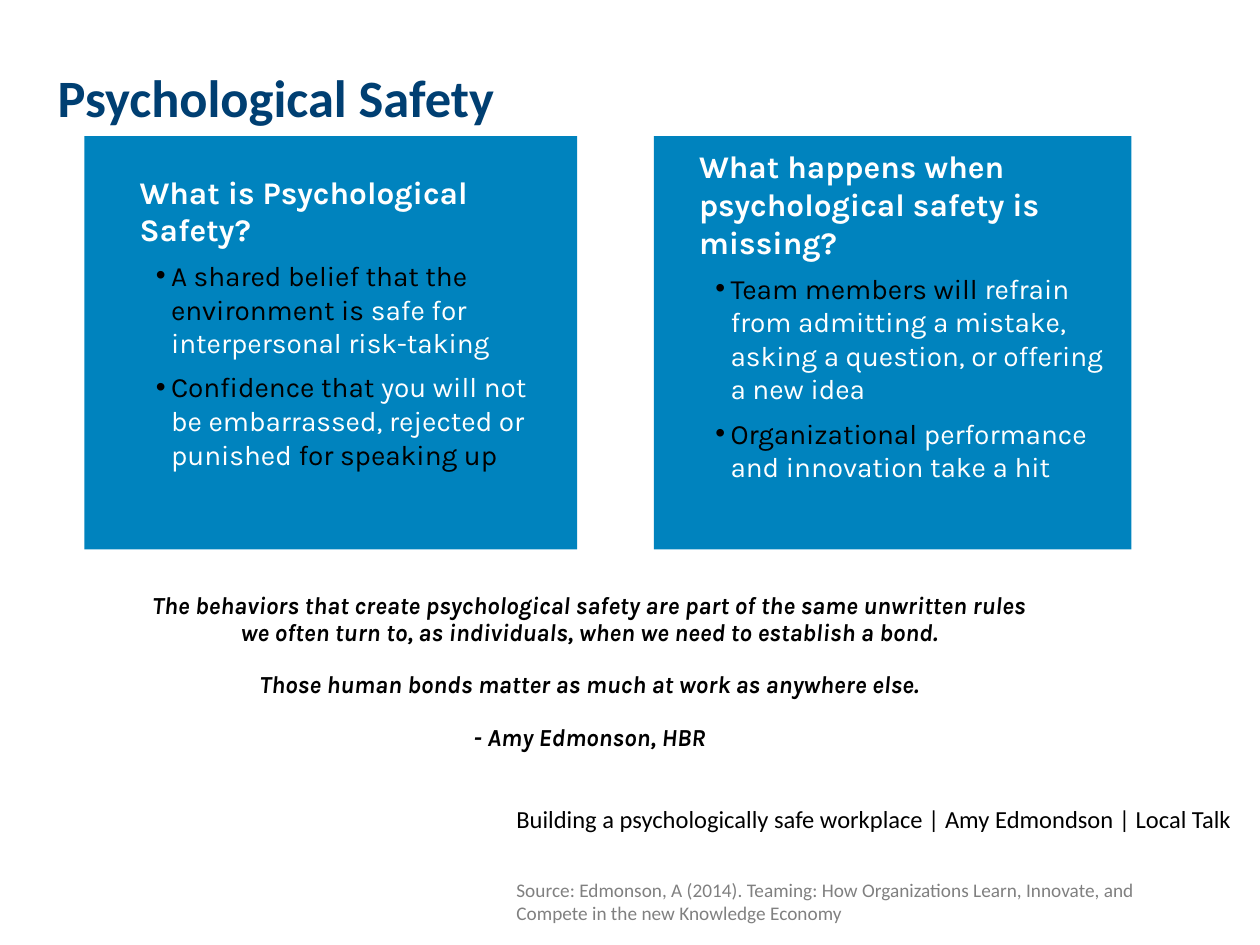
"""Build the Psychological Safety slide with two panels, a quote and its sources."""
from lxml import etree
from pptx import Presentation
from pptx.dml.color import RGBColor
from pptx.enum.shapes import MSO_SHAPE
from pptx.enum.text import MSO_ANCHOR, PP_ALIGN
from pptx.oxml.ns import qn
from pptx.util import Inches, Pt

COLORS = {"navy": "003F72", "blue": "0083BE", "white": "FFFFFF", "black": "000000", "gray": "808080"}

FORMATS = {
    "title": {"size": Pt(30), "name": "Calibri", "bold": True},
    "heading": {"size": Pt(18), "name": "Karla", "bold": True},
    "bullet": {"size": Pt(16), "name": "Karla", "bold": False},
    "quote": {"size": Pt(14), "name": "Karla", "bold": True, "italic": True},
    "talk": {"size": Pt(14), "name": "Calibri"},
    "source": {"size": Pt(11), "name": "Calibri"},
}

TITLE = "Psychological Safety"
QUOTE = [
    "The behaviors that create psychological safety are part of the same unwritten rules "
    "we often turn to, as individuals, when we need to establish a bond.",
    "Those human bonds matter as much at work as anywhere else.",
    "- Amy Edmonson, HBR",
]
TALK = "Building a psychologically safe workplace | Amy Edmondson | Local Talk"
SOURCE = (
    "Source: Edmonson, A (2014). Teaming: How Organizations Learn, Innovate, and "
    "Compete in the new Knowledge Economy"
)

PANEL_TOP, PANEL_HEIGHT, PANEL_TEXT_WIDTH = 1.08, 3.28, 3.47
PANELS = [
    {
        "left": 5.19, "width": 3.79, "text_at": (5.45, 1.12), "text_height": 2.79,
        "heading": "What happens when psychological safety is missing?",
        "bullets": [
            [("Team members will ", "black"),
             ("refrain from admitting a mistake, asking a question, or offering a new idea", "white")],
            [("Organizational ", "black"), ("performance and innovation take a hit", "white")],
        ],
    },
    {
        "left": 0.67, "width": 3.91, "text_at": (1.01, 1.32), "text_height": 2.49,
        "heading": "What is Psychological Safety?",
        "bullets": [
            [("A shared belief that the environment is ", "black"),
             ("safe for interpersonal risk-taking", "white")],
            [("Confidence that ", "black"),
             ("you will not be embarrassed, rejected or punished ", "white"),
             ("for speaking up", "black")],
        ],
    },
]


def color(name):
    return RGBColor.from_string(COLORS[name])


def add_frame(slide, left, top, width, height, wrap=True):
    frame = slide.shapes.add_textbox(*map(Inches, (left, top, width, height))).text_frame
    frame.word_wrap = wrap
    return frame


def add_paragraph(frame, runs, style, **layout):
    first = frame.paragraphs[0]
    paragraph = frame.add_paragraph() if first.runs else first
    for attribute, value in layout.items():
        setattr(paragraph, attribute, value)
    for text, tint in runs:
        run = paragraph.add_run()
        run.text = text
        run.font.color.rgb = color(tint)
        for attribute, value in FORMATS[style].items():
            setattr(run.font, attribute, value)
    return paragraph


def set_bullet(paragraph):
    properties = paragraph._p.get_or_add_pPr()
    properties.set("marL", str(Inches(0.25)))
    properties.set("indent", str(Inches(-0.12)))
    etree.SubElement(properties, qn("a:buFont")).set("typeface", "Arial")
    etree.SubElement(properties, qn("a:buChar")).set("char", "•")


def add_panel(slide, panel):
    box = slide.shapes.add_shape(
        MSO_SHAPE.RECTANGLE,
        *map(Inches, (panel["left"], PANEL_TOP, panel["width"], PANEL_HEIGHT)))
    box.shadow.inherit = False
    box.fill.solid()
    box.fill.fore_color.rgb = color("blue")
    box.line.fill.background()
    frame = add_frame(slide, *panel["text_at"], PANEL_TEXT_WIDTH, panel["text_height"])
    add_paragraph(frame, [(panel["heading"], "white")], "heading", space_after=Pt(6))
    for runs in panel["bullets"]:
        set_bullet(add_paragraph(frame, runs, "bullet", space_after=Pt(6)))


def main():
    deck = Presentation()
    deck.slide_width, deck.slide_height = Inches(10), Inches(7.5)
    slide = deck.slides.add_slide(deck.slide_layouts[6])

    title = add_frame(slide, 0.36, 0.37, 7.96, 0.85)
    title.vertical_anchor = MSO_ANCHOR.MIDDLE
    add_paragraph(title, [(TITLE, "navy")], "title", line_spacing=0.9)

    quote = add_frame(slide, 1.09, 4.66, 7.18, 1.59)
    for index, sentence in enumerate(QUOTE):
        add_paragraph(quote, [(sentence, "black")], "quote", alignment=PP_ALIGN.CENTER,
                      line_spacing=0.9, space_before=Pt(15 if index else 0))

    source = add_frame(slide, 4, 6.92, 5.65, 0.5)
    add_paragraph(source, [(SOURCE, "gray")], "source")

    for panel in PANELS:
        add_panel(slide, panel)

    talk = add_frame(slide, 4, 6.33, 6, 0.34, wrap=False)
    add_paragraph(talk, [(TALK, "black")], "talk")

    deck.save("out.pptx")


if __name__ == "__main__":
    main()
